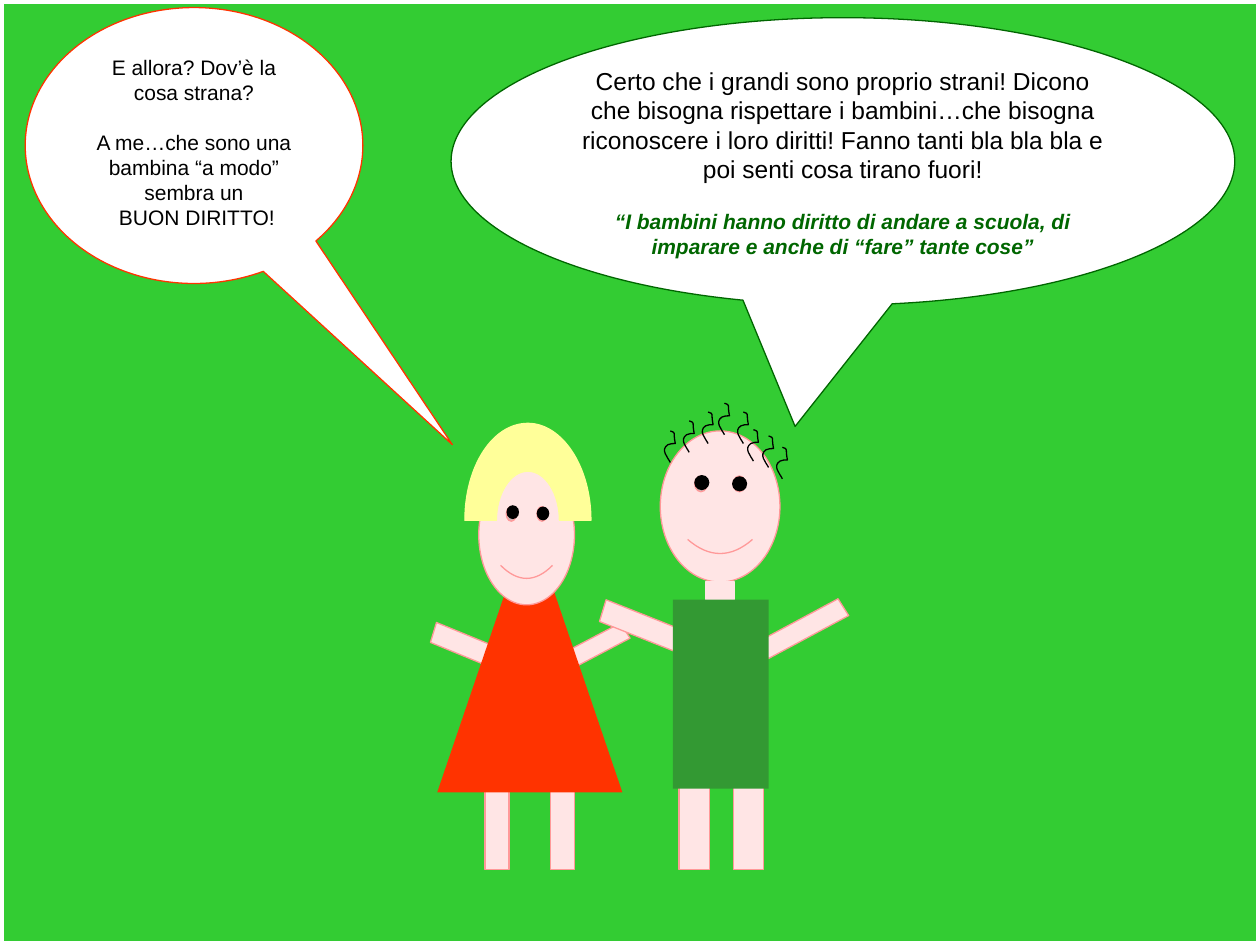
from dataclasses import dataclass

from lxml.etree import SubElement
from pptx import Presentation
from pptx.dml.color import RGBColor
from pptx.enum.shapes import MSO_SHAPE as Geo
from pptx.enum.text import MSO_ANCHOR as Anchor, PP_ALIGN as Align
from pptx.oxml.ns import qn
from pptx.util import Pt

PX = 9144
SKIN, EDGE, BLACK, WHITE = "FFE5E5", "FF9999", "000000", "FFFFFF"
RED, LEAF, DARK, BLOND = "FF3300", "339933", "006600", "FFFF99"


@dataclass(frozen=True)
class Part:
    geo: Geo
    box: tuple[int, int, int, int]
    fill: str | None = SKIN
    line: str | None = EDGE
    turn: float = 0
    adj: tuple[float, ...] = ()
    width: float = 0.75


@dataclass(frozen=True)
class Curve:
    start: tuple[int, int]
    steps: tuple[tuple[int, ...], ...]
    high: int


def color(code: str) -> RGBColor:
    return RGBColor.from_string(code)


def style(shape, fill: str | None, line: str | None, width: float = 0.75) -> None:
    shape.shadow.inherit = False
    if fill:
        shape.fill.solid()
        shape.fill.fore_color.rgb = color(fill)
    else:
        shape.fill.background()
    if line:
        shape.line.color.rgb = color(line)
        shape.line.width = Pt(width)
    else:
        shape.line.fill.background()


def draw(shapes, part: Part):
    shape = shapes.add_shape(part.geo, *(n * PX for n in part.box))
    shape.rotation = part.turn
    for i, value in enumerate(part.adj):
        shape.adjustments[i] = value
    style(shape, part.fill, part.line, part.width)
    return shape


def trace(shapes, curve: Curve, left: int = 0, top: int = 0,
          fill: str | None = None, line: str = BLACK) -> None:
    pairs = [pair for step in curve.steps for pair in zip(step[::2], step[1::2])]
    spots = [((x + left) * PX, (y + top) * PX) for x, y in (curve.start, *pairs)]
    pen = shapes.build_freeform(*spots[0])
    pen.add_line_segments(spots[1:], close=fill is not None)
    shape = pen.convert_to_shape()
    shape.height = curve.high * PX
    track = next(shape.element.iter(qn("a:path")))
    track.set("h", str(curve.high * PX))
    lines = iter(track.findall(qn("a:lnTo")))
    for step in curve.steps:
        if len(step) == 2:
            next(lines)
            continue
        bend = SubElement(track, qn("a:cubicBezTo"))
        first = next(lines)
        first.addprevious(bend)
        for node in (first, next(lines), next(lines)):
            bend.append(node[0])
            track.remove(node)
    style(shape, fill, line)


def write(frame, text: str, size: int = 12, ink: str = BLACK, bold: bool = False,
          slant: bool = False, gap: int = 0, first: bool = False) -> None:
    para = frame.paragraphs[0] if first else frame.add_paragraph()
    para.alignment = Align.CENTER
    para.space_before = Pt(gap)
    run = para.add_run()
    run.text = text
    font = run.font
    font.name, font.size = "Arial", Pt(size)
    font.bold, font.italic = bold, slant
    font.color.rgb = color(ink)


def speech(shapes, part: Part):
    frame = draw(shapes, part).text_frame
    frame.word_wrap = True
    frame.vertical_anchor = Anchor.TOP
    return frame


def arm(left: int, top: int, wide: int, high: int, turn: float) -> Part:
    return Part(Geo.PARALLELOGRAM, (left, top, wide, high), turn=turn, adj=(0.25,))


def leg(left: int, top: int, wide: int, high: int) -> Part:
    return Part(Geo.RECTANGLE, (left, top, wide, high))


def head(left: int, top: int, wide: int, high: int) -> Part:
    return Part(Geo.SMILEY_FACE, (left, top, wide, high), adj=(0.0465,))


def eye(left: int, top: int, wide: int, high: int) -> Part:
    return Part(Geo.OVAL, (left, top, wide, high), BLACK, None)


BOB = Curve((394, 413), (
    (394, 392, 405, 374, 419, 374), (433, 374, 444, 392, 444, 413), (469, 413),
    (469, 370, 446, 336, 419, 336), (391, 336, 369, 370, 369, 413), (394, 413),
), 155)
CURL = Curve((8, 25), (
    (6, 21, 0, 15, 6, 11), (8, 10, 10, 10, 12, 10), (10, 0, 13, 2, 8, 0),
), 25)
CURLS = ((524, 342), (539, 334), (582, 327), (590, 341),
         (567, 320), (613, 355), (602, 346), (554, 327))
GIRL = (
    arm(461, 485, 19, 58, 57.6),
    arm(360, 484, 22, 58, 106.9),
    *(leg(x, 618, 19, 72) for x in (385, 437)),
    Part(Geo.ISOSCELES_TRIANGLE, (347, 413, 147, 216), RED, None),
    head(380, 369, 76, 111),
)
LOOK = (eye(426, 402, 10, 11), eye(402, 401, 10, 11))
BOY = (
    arm(627, 463, 21, 72, 57.6),
    arm(500, 462, 24, 72, 106.9),
    *(leg(x, 612, 24, 78) for x in (539, 582)),
    head(524, 342, 95, 120),
    eye(581, 378, 12, 12),
    eye(551, 377, 12, 12),
    Part(Geo.RECTANGLE, (560, 462, 23, 14), SKIN, SKIN),
    Part(Geo.RECTANGLE, (534, 476, 76, 150), LEAF, None),
)


def main() -> None:
    deck = Presentation()
    deck.slide_width, deck.slide_height = 1000 * PX, 750 * PX
    slide = deck.slides.add_slide(deck.slide_layouts[6])
    slide.background.fill.solid()
    slide.background.fill.fore_color.rgb = color("33CC33")
    shapes = slide.shapes
    draw(shapes, Part(Geo.RECTANGLE, (0, 0, 1000, 750), None, WHITE, width=4.5))

    girl = shapes.add_group_shape().shapes
    for part in GIRL:
        draw(girl, part)
    trace(girl, BOB, fill=BLOND, line=BLOND)
    for part in LOOK:
        draw(girl, part)

    boy = shapes.add_group_shape().shapes
    for part in BOY:
        draw(boy, part)
    for left, top in CURLS:
        trace(boy, CURL, left, top)

    says = speech(shapes, Part(Geo.OVAL_CALLOUT, (20, 6, 268, 219), WHITE, RED,
                               adj=(0.765, 1.084)))
    write(says, "E allora? Dov’è la cosa strana?", first=True)
    write(says, "A me…che sono una bambina “a modo”", gap=14)
    write(says, "sembra un")
    write(says, " BUON DIRITTO!")

    says = speech(shapes, Part(Geo.OVAL_CALLOUT, (358, 14, 622, 228), WHITE, DARK,
                               adj=(-0.061, 0.923)))
    write(says, "Certo che i grandi sono proprio strani! Dicono che bisogna "
          "rispettare i bambini…che bisogna riconoscere i loro diritti! Fanno "
          "tanti bla bla bla e poi senti cosa tirano fuori!", size=14, first=True)
    write(says, "“I bambini hanno diritto di andare a scuola, di imparare e anche "
          "di “fare” tante cose”", ink=DARK, bold=True, slant=True, gap=14)
    deck.save("out.pptx")


if __name__ == "__main__":
    main()
